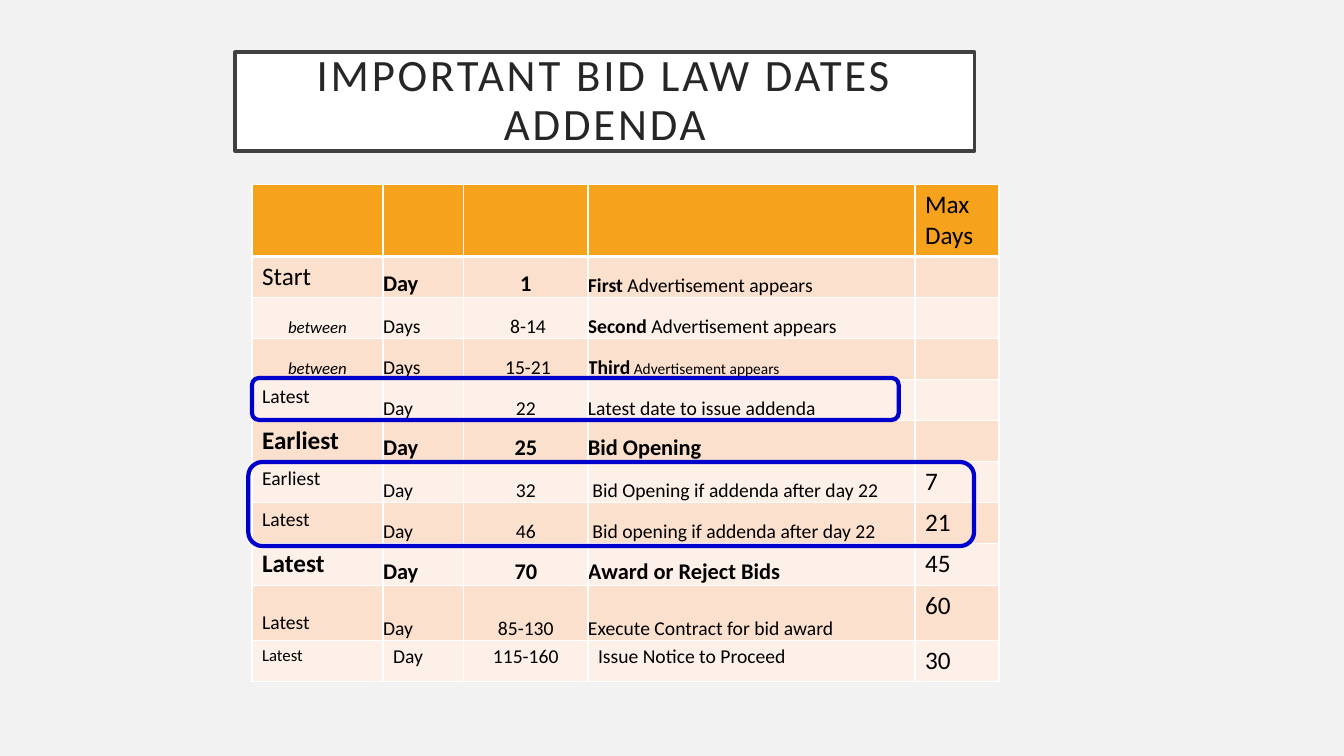
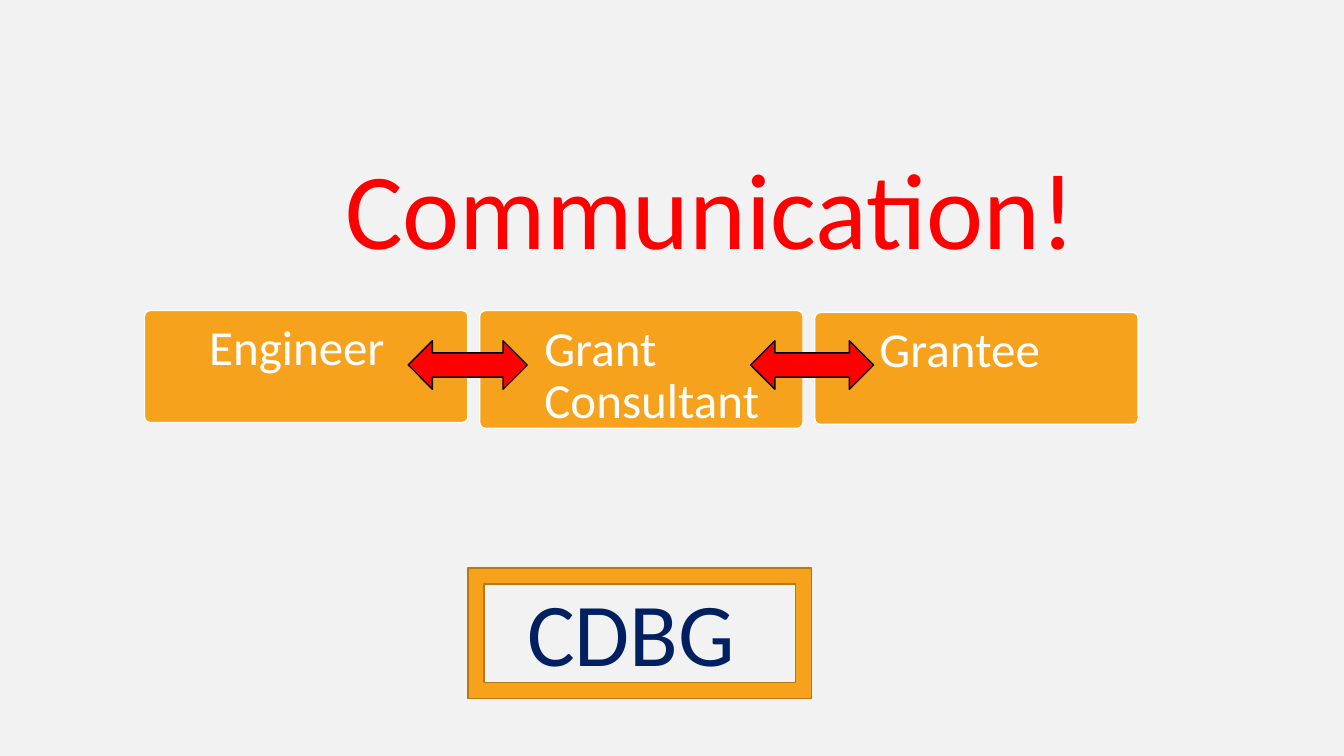
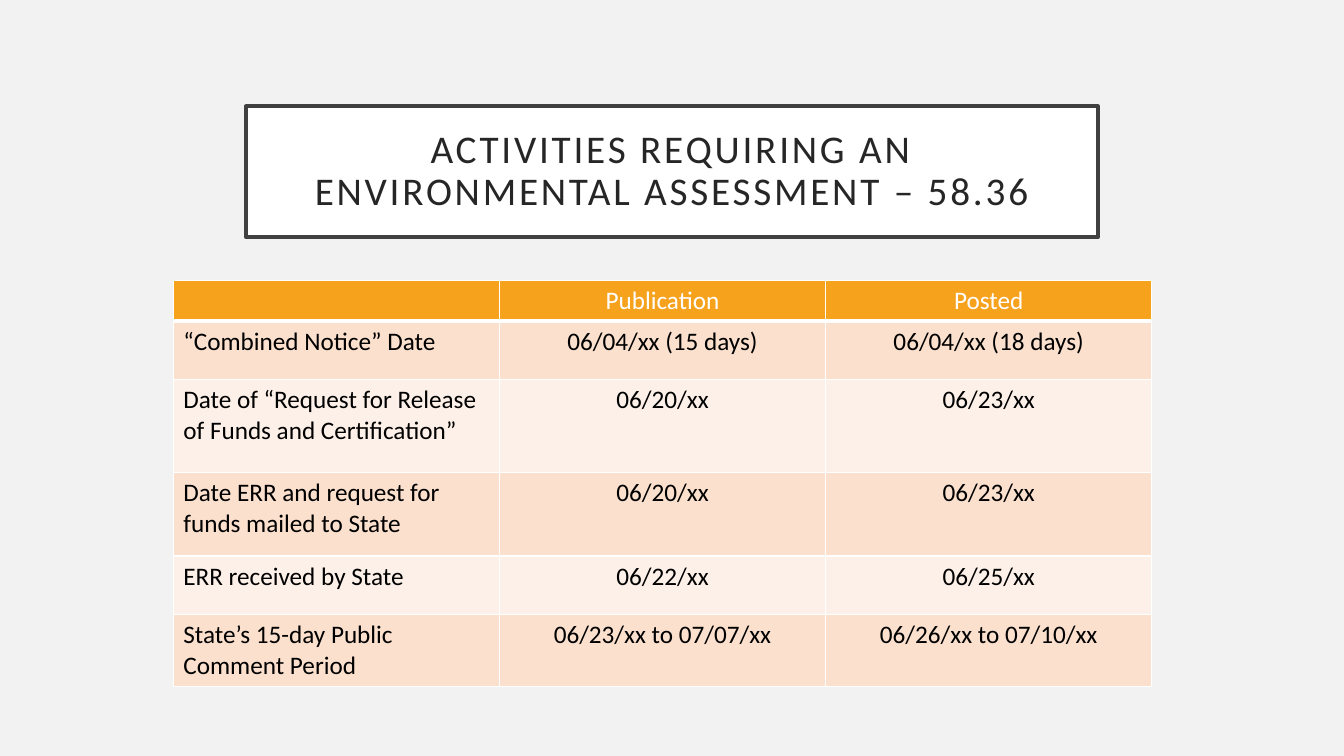
"""Builds three slides: bid law dates, project communication and assessment notices."""
from lxml.etree import SubElement
from pptx import Presentation
from pptx.dml.color import RGBColor
from pptx.enum.shapes import MSO_SHAPE
from pptx.enum.text import MSO_ANCHOR, PP_ALIGN
from pptx.oxml.ns import qn
from pptx.util import Pt

FONT = "Calibri"
BACKGROUND = "F2F2F2"
ORANGE = "F6A21D"
BANDS = ("FDF0E8", "FBE0CD")
WHITE = "FFFFFF"
BLACK = "000000"
RED = "FF0000"
TITLE_TEXT = "262626"
TITLE_LINE = "404040"
LEFT, CENTER = PP_ALIGN.LEFT, PP_ALIGN.CENTER


def draw(slide, kind, bounds, fill=None, line=None, weight=1):
    """Add a preset shape without shadow; bounds are in points."""
    shape = slide.shapes.add_shape(kind, *[Pt(value) for value in bounds])
    shape.shadow.inherit = False
    if fill:
        shape.fill.solid()
        shape.fill.fore_color.rgb = RGBColor.from_string(fill)
    else:
        shape.fill.background()
    if line:
        shape.line.color.rgb = RGBColor.from_string(line)
        shape.line.width = Pt(weight)
    else:
        shape.line.fill.background()
    return shape


def write(frame, runs, color=BLACK, align=LEFT, spacing=None):
    """Fill the first paragraph with (text, size, bold, italic) runs."""
    frame.word_wrap = True
    paragraph = frame.paragraphs[0]
    paragraph.alignment = align
    paragraph.line_spacing = spacing
    for text, size, bold, italic in runs:
        run = paragraph.add_run()
        run.text = text
        run.font.name = FONT
        run.font.size = Pt(size)
        run.font.bold = bold
        run.font.italic = italic
        run.font.color.rgb = RGBColor.from_string(color)
    return paragraph


presentation = Presentation()
presentation.slide_width = Pt(960)
presentation.slide_height = Pt(540)
slides = []
for number in range(3):
    slide = presentation.slides.add_slide(presentation.slide_layouts[6])
    slide.background.fill.solid()
    slide.background.fill.fore_color.rgb = RGBColor.from_string(BACKGROUND)
    slides.append(slide)
dates_slide, communication_slide, assessment_slide = slides

titles = [
    (dates_slide, "IMPORTANT BID LAW DATES ADDENDA", 32, (168, 37.2, 528, 70.8)),
    (assessment_slide, "ACTIVITIES REQUIRING AN ENVIRONMENTAL ASSESSMENT – 58.36", 28,
     (175.7, 75.9, 608.6, 93.6)),
]
for slide, text, size, bounds in titles:
    frame = draw(slide, MSO_SHAPE.RECTANGLE, bounds, WHITE, TITLE_LINE, 2.5).text_frame
    frame.margin_left = frame.margin_right = Pt(14.4)
    frame.margin_top = frame.margin_bottom = Pt(14.4)
    frame.vertical_anchor = MSO_ANCHOR.MIDDLE
    paragraph = write(frame, [(text, size, False, False)], TITLE_TEXT, CENTER, 0.9)
    paragraph.runs[0].font._element.set("spc", "200")

table_layouts = [
    (dates_slide, 180, 131.8, [93.6, 57.6, 88.8, 233.6, 60],
     [51.4] + [29.3] * 7 + [30, 39.2, 29.3]),
    (assessment_slide, 123.8, 200.2, [233] * 3, [29.2, 41.8, 66.2, 59.8, 41.8, 51.2]),
]
tables = []
for slide, left, top, widths, heights in table_layouts:
    table = slide.shapes.add_table(len(heights), len(widths), Pt(left), Pt(top),
                                   Pt(sum(widths)), Pt(sum(heights))).table
    for column, width in zip(table.columns, widths):
        column.width = Pt(width)
    for row, height in zip(table.rows, heights):
        row.height = Pt(height)
    for row_index, row in enumerate(table.rows):
        for cell in row.cells:
            properties = cell._tc.get_or_add_tcPr()
            for side in ("L", "R", "T", "B"):
                thick = (row_index, side) in ((0, "B"), (1, "T"))
                border = SubElement(properties, qn(f"a:ln{side}"), w=str(Pt(3 if thick else 1)))
                SubElement(SubElement(border, qn("a:solidFill")), qn("a:srgbClr"), val=WHITE)
            cell.fill.solid()
            fill = BANDS[row_index % 2] if row_index else ORANGE
            cell.fill.fore_color.rgb = RGBColor.from_string(fill)
    tables.append(table)
dates_table, notice_table = tables

bid_dates = [
    ("Start", 18, "Day", "1", 16, [("First ", 14, True), ("Advertisement appears", 14, False)], ""),
    ("between", 12, "Days", " 8-14", 14,
     [("Second ", 14, True), ("Advertisement appears", 14, False)], ""),
    ("between", 12, "Days", " 15-21", 14,
     [("Third", 14, True), (" Advertisement appears", 11, False)], ""),
    ("Latest", 14, "Day", "22", 14, [("Latest date to issue addenda", 14, False)], ""),
    ("Earliest", 18, "Day", "25", 16, [("Bid Opening", 16, True)], ""),
    ("Earliest", 14, "Day", "32", 14, [(" Bid Opening if addenda after day 22", 14, False)], "7"),
    ("Latest", 14, "Day", "46", 14, [(" Bid opening if addenda after day 22", 14, False)], "21"),
    ("Latest", 18, "Day", "70", 16, [("Award or Reject Bids", 16, True)], "45"),
    ("Latest", 14, "Day", "85-130", 14, [("Execute Contract for bid award", 14, False)], "60"),
    ("Latest", 12, "Day", "115-160", 14, [("Issue Notice to Proceed", 14, False)], "30"),
]
write(dates_table.cell(0, 4).text_frame, [("Max Days", 18, False, False)])
for row_index, (label, label_size, unit, day, size, event, limit) in enumerate(bid_dates, 1):
    between = label == "between"
    bold = size == 16
    contents = [
        ([(label, label_size, bold and label != "Start", between)], CENTER if between else LEFT),
        ([(unit, size, bold, False)], LEFT),
        ([(day, size, bold, False)], CENTER),
        ([(*run, False) for run in event], LEFT),
        ([(limit, 18, False, False)] if limit else [], LEFT),
    ]
    for column_index, (runs, align) in enumerate(contents):
        cell = dates_table.cell(row_index, column_index)
        write(cell.text_frame, runs, align=align)
        tight = column_index in (1, 2, 3) and row_index < len(bid_dates)
        if tight or (between and column_index == 0):
            cell.margin_left = cell.margin_right = cell.margin_top = cell.margin_bottom = 0
            cell.vertical_anchor = MSO_ANCHOR.BOTTOM
dates_table.cell(9, 0).margin_top = Pt(18.2)

for bounds in [(180, 270, 462, 30), (177.4, 330, 518.4, 60)]:
    draw(dates_slide, MSO_SHAPE.ROUNDED_RECTANGLE, bounds, line="0000CC", weight=3)

parties = [("Engineer", 221.8, 80), ("Grant Consultant", 221.8, 84.2), ("Grantee", 223.2, 80)]
for index, (name, top, height) in enumerate(parties):
    box = draw(communication_slide, MSO_SHAPE.ROUNDED_RECTANGLE,
               (103.2 + 239.4 * index, top, 231, height), ORANGE, WHITE)
    box.adjustments[0] = 0.05
    frame = box.text_frame
    frame.margin_left, frame.margin_right = Pt(45), Pt(12)
    frame.margin_top, frame.margin_bottom = Pt(8.2), 0
    frame.vertical_anchor = MSO_ANCHOR.TOP
    write(frame, [(name, 35, False, False)], WHITE, spacing=0.9)
for left, width in [(291.6, 85), (536.2, 87.8)]:
    draw(communication_slide, MSO_SHAPE.LEFT_RIGHT_ARROW, (left, 243.4, width, 34.6), RED, BLACK)
draw(communication_slide, MSO_SHAPE.FRAME, (334.2, 405.6, 245.6, 93.4), ORANGE, "B67815")

captions = [
    ("Communication!", 77.3, RED, CENTER, (231.1, 97.2, 553, 100.8)),
    ("CDBG", 64, "002060", LEFT, (369.4, 408.2, 223.9, 85)),
]
for text, size, color, align, bounds in captions:
    caption = communication_slide.shapes.add_textbox(*[Pt(value) for value in bounds])
    write(caption.text_frame, [(text, size, False, False)], color, align)

notices = [
    ("", "Publication", "Posted"),
    ("“Combined Notice” Date", "06/04/xx (15 days)", "06/04/xx (18 days)"),
    ("Date of “Request for Release of Funds and Certification”", "06/20/xx", "06/23/xx"),
    ("Date ERR and request for funds mailed to State", "06/20/xx", "06/23/xx"),
    ("ERR received by State", "06/22/xx", "06/25/xx"),
    ("State’s 15-day Public Comment Period", "06/23/xx to 07/07/xx", "06/26/xx to 07/10/xx"),
]
for row_index, texts in enumerate(notices):
    for column_index, text in enumerate(texts):
        if text:
            write(notice_table.cell(row_index, column_index).text_frame,
                  [(text, 18, False, False)], BLACK if row_index else WHITE,
                  CENTER if column_index else LEFT)

presentation.save("out.pptx")
